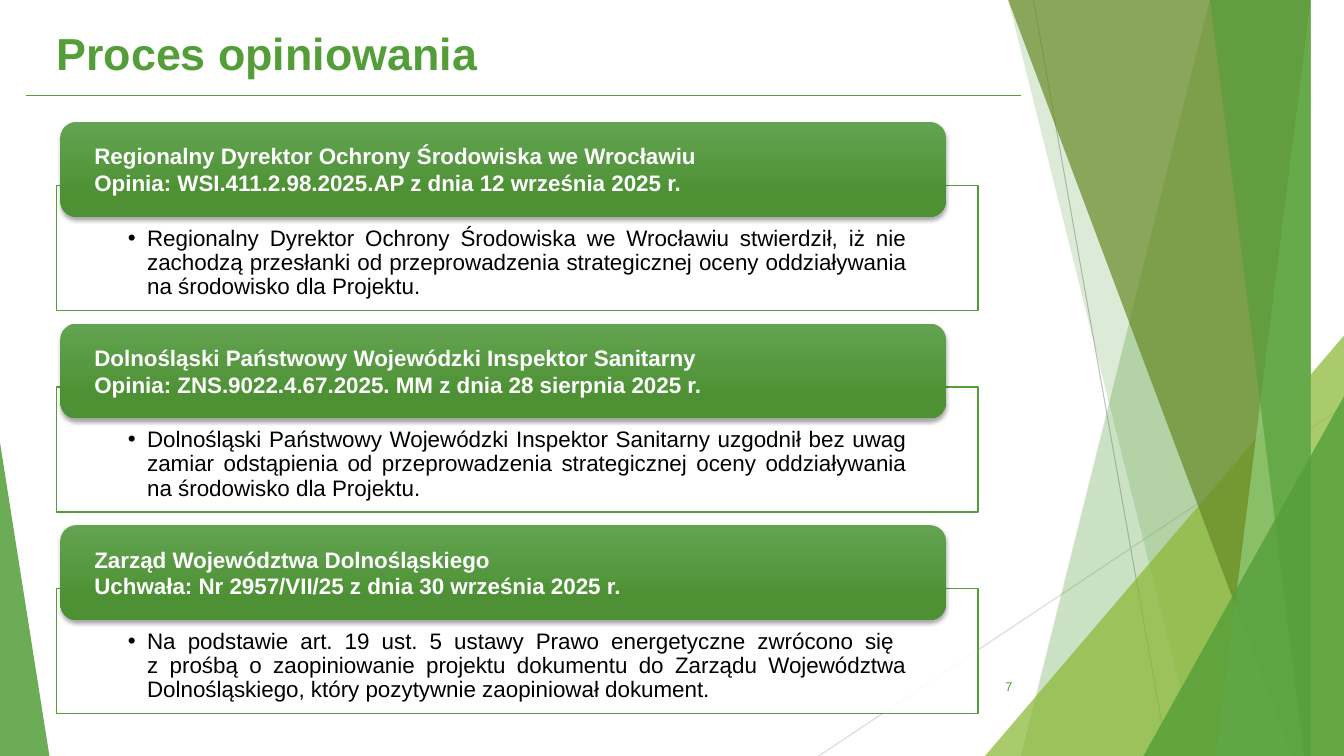
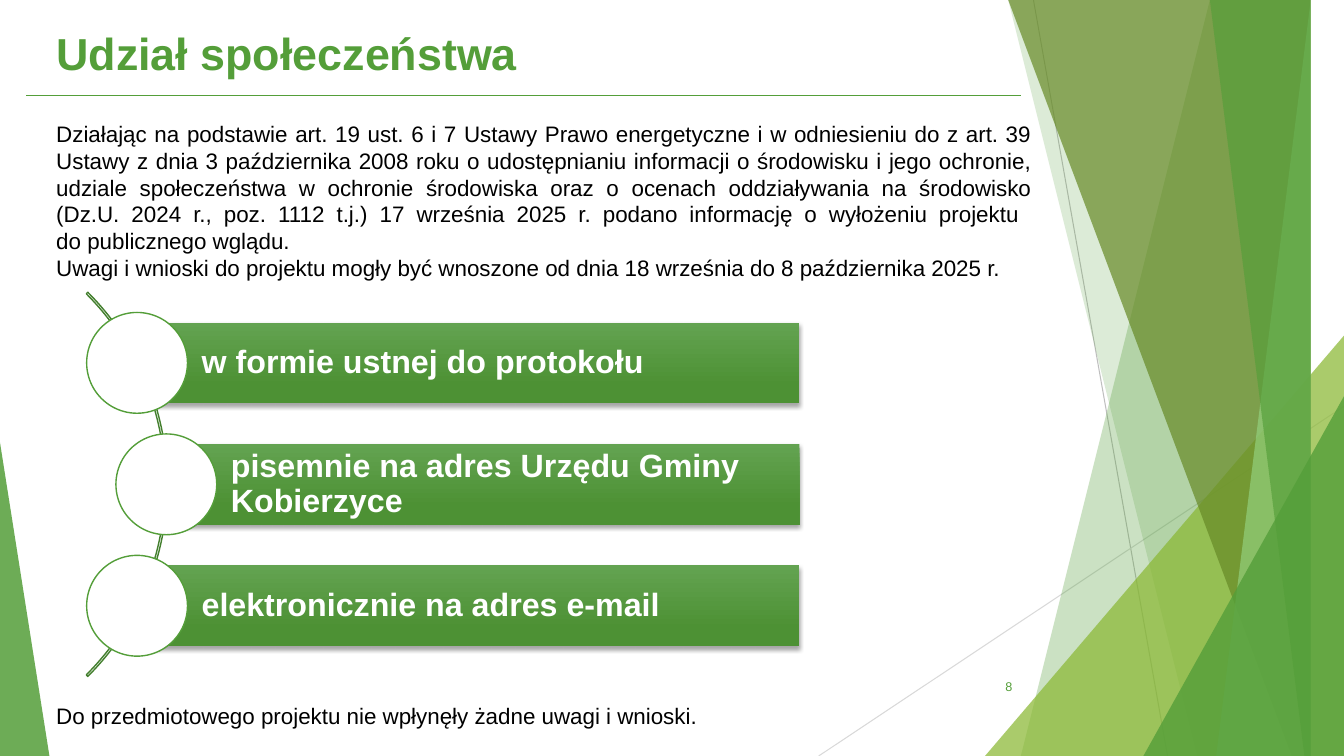
from copy import deepcopy

from lxml.etree import SubElement
from pptx import Presentation
from pptx.dml.color import RGBColor
from pptx.enum.shapes import MSO_CONNECTOR, MSO_SHAPE as SHAPE
from pptx.enum.text import MSO_ANCHOR as ANCHOR, MSO_AUTO_SIZE, PP_ALIGN as ALIGN
from pptx.oxml.ns import qn
from pptx.util import Inches, Pt

WIDTH, HEIGHT = 13.33, 7.5
FONT = "Arial"
GREEN = RGBColor(0x54, 0x9E, 0x39)
DARK_GREEN = RGBColor(0x43, 0x7F, 0x2E)
LIME = RGBColor(0x8A, 0xB8, 0x33)
OLIVE = RGBColor(0x67, 0x8A, 0x26)
LIGHT_GREEN = RGBColor(0x93, 0xD0, 0x7D)
GRADIENT = ((0, RGBColor(0x63, 0xA3, 0x51)), (0.78, RGBColor(0x4D, 0x91, 0x34)))
GRAY = RGBColor(0xBF, 0xBF, 0xBF)
PALE_GRAY = RGBColor(0xD9, 0xD9, 0xD9)
WHITE = RGBColor(0xFF, 0xFF, 0xFF)
BLACK = RGBColor(0, 0, 0)

BODY_TEXT = {"size": Pt(16), "bold": False}
HEADER_TEXT = {"size": Pt(16), "bold": True}
BAR_TEXT = {"size": Pt(23), "bold": True}
TITLE_TEXT = {"size": Pt(32), "bold": True}
NUMBER_TEXT = {"size": Pt(9), "bold": False}
DEFAULT_INSETS = (0.1, 0.05, 0.1, 0.05)

OPINIONS = (
    ("Regionalny Dyrektor Ochrony Środowiska we Wrocławiu\n"
     "Opinia: WSI.411.2.98.2025.AP z dnia 12 września 2025 r.",
     "Regionalny Dyrektor Ochrony Środowiska we Wrocławiu stwierdził, iż nie zachodzą "
     "przesłanki od przeprowadzenia strategicznej oceny oddziaływania na środowisko dla Projektu."),
    ("Dolnośląski Państwowy Wojewódzki Inspektor Sanitarny\n"
     "Opinia: ZNS.9022.4.67.2025. MM z dnia 28 sierpnia 2025 r.",
     "Dolnośląski Państwowy Wojewódzki Inspektor Sanitarny uzgodnił bez uwag zamiar odstąpienia "
     "od przeprowadzenia strategicznej oceny oddziaływania na środowisko dla Projektu."),
    ("Zarząd Województwa Dolnośląskiego\n"
     "Uchwała: Nr 2957/VII/25 z dnia 30 września 2025 r.",
     "Na podstawie art. 19 ust. 5 ustawy Prawo energetyczne zwrócono się \n"
     "z prośbą o zaopiniowanie projektu dokumentu do Zarządu Województwa Dolnośląskiego, "
     "który pozytywnie zaopiniował dokument."),
)
NOTICE = (
    "Działając na podstawie art. 19 ust. 6 i 7 Ustawy Prawo energetyczne i w odniesieniu do "
    "z art. 39 Ustawy z dnia 3 października 2008 roku o udostępnianiu informacji o środowisku "
    "i jego ochronie, udziale społeczeństwa w ochronie środowiska oraz o ocenach oddziaływania "
    "na środowisko (Dz.U. 2024 r., poz. 1112 t.j.) 17 września 2025 r. podano informację "
    "o wyłożeniu projektu \ndo publicznego wglądu.",
    "Uwagi i wnioski do projektu mogły być wnoszone od dnia 18 września do 8 października 2025 r.",
)
CHANNELS = (
    ("w formie ustnej do protokołu", 1.36),
    ("pisemnie na adres Urzędu Gminy Kobierzyce", 1.65),
    ("elektronicznie na adres e-mail", 1.36),
)
OUTCOME = "Do przedmiotowego projektu nie wpłynęły żadne uwagi i wnioski."


def set_all(target, values):
    for name, value in values.items():
        setattr(target, name, value)


def write(box, texts, style, color, align=ALIGN.LEFT, anchor=ANCHOR.TOP,
          insets=DEFAULT_INSETS, spacing=1.0):
    frame = box.text_frame
    left, top, right, bottom = map(Inches, insets)
    set_all(frame, {"word_wrap": True, "auto_size": MSO_AUTO_SIZE.NONE,
                    "vertical_anchor": anchor, "margin_left": left, "margin_top": top,
                    "margin_right": right, "margin_bottom": bottom})
    for index, text in enumerate(texts):
        para = frame.add_paragraph() if index else frame.paragraphs[0]
        para.text = text
        set_all(para, {"alignment": align, "line_spacing": spacing})
        for span in para.runs:
            set_all(span.font, {"name": FONT, **style})
            span.font.color.rgb = color
    for line_break in box.element.iter(qn("a:br")):
        line_break.append(deepcopy(line_break.getprevious().find(qn("a:rPr"))))


def add_text(page, at, texts, style, color, **options):
    box = page.shapes.add_textbox(*map(Inches, at))
    write(box, texts, style, color, **options)
    return box


def paint(shape, fill=None, opacity=100, line=None):
    shape.shadow.inherit = False
    if fill is None:
        shape.fill.background()
    else:
        shape.fill.solid()
        shape.fill.fore_color.rgb = fill
        if opacity < 100:
            color = shape.element.spPr.find(qn("a:solidFill")).find(qn("a:srgbClr"))
            SubElement(color, qn("a:alpha"), val=str(opacity * 1000))
    if line is None:
        shape.line.fill.background()
    else:
        shape.line.color.rgb = line
        shape.line.width = Pt(1)
    return shape


def add_preset(page, kind, at, adjustments=(), **look):
    shape = page.shapes.add_shape(kind, *map(Inches, at))
    for index, value in enumerate(adjustments):
        shape.adjustments[index] = value
    return paint(shape, **look)


def add_panel(page, kind, at):
    panel = add_preset(page, kind, at)
    panel.fill.gradient()
    panel.fill.gradient_angle = 270
    for stop, (position, color) in zip(panel.fill.gradient_stops, GRADIENT):
        stop.position = position
        stop.color.rgb = color
    effects = panel.element.spPr.find(qn("a:effectLst"))
    shadow = SubElement(effects, qn("a:outerShdw"), blurRad=str(Pt(3)), dist=str(Pt(2)),
                        dir="5400000", algn="ctr", rotWithShape="0")
    color = SubElement(shadow, qn("a:srgbClr"), val="000000")
    SubElement(color, qn("a:alpha"), val="35000")
    return panel


def add_line(page, start, end, color, width):
    line = page.shapes.add_connector(MSO_CONNECTOR.STRAIGHT, *map(Inches, start + end))
    line.line.color.rgb = color
    line.line.width = Pt(width)
    SubElement(line.element.spPr, qn("a:effectLst"))
    return line


def add_shard(page, top, bottom, color, opacity):
    builder = page.shapes.build_freeform(top, 0, scale=Inches(1))
    builder.add_line_segments([(WIDTH, 0), (WIDTH, HEIGHT), (bottom, HEIGHT)], close=True)
    return paint(builder.convert_to_shape(), color, opacity)


def add_corner(page, at, apex, color, opacity):
    return add_preset(page, SHAPE.ISOSCELES_TRIANGLE, at, (apex,), fill=color, opacity=opacity)


def decorate_layout(layout, page):
    decor = [
        add_line(page, (10.25, 0), (11.58, HEIGHT), GRAY, 0.75),
        add_line(page, (WIDTH, 4.03), (8.12, HEIGHT), PALE_GRAY, 0.75),
        add_shard(page, 12.28, 10.04, GREEN, 30),
        add_shard(page, 10.5, 11.83, GREEN, 20),
        add_corner(page, (9.77, 3.33, 3.56, 4.17), 1, LIME, 72),
        add_shard(page, 10.21, 12.91, OLIVE, 70),
        add_shard(page, 13.03, 11.92, LIGHT_GREEN, 70),
        add_shard(page, 11.96, 13.18, GREEN, 65),
        add_corner(page, (11.34, 3.93, 1.99, 3.57), 1, GREEN, 80),
        add_corner(page, (0, 4.39, 0.49, 3.11), 0, GREEN, 85),
        add_line(page, (0.26, 0.95), (10.13, 0.95), GREEN, 1),
    ]
    for index, shape in enumerate(decor):
        shape.element.xpath(".//p:cNvPr")[0].set("id", str(100 + index))
        layout.shapes.element.insert(2 + index, shape.element)


def add_page(deck, layout, title, number):
    page = deck.slides.add_slide(layout)
    heading = page.shapes.title
    set_all(heading, {"left": Inches(0.46), "top": Inches(0.21),
                      "width": Inches(6.67), "height": Inches(0.64)})
    write(heading, [title], TITLE_TEXT, GREEN)
    add_text(page, (9.39, 6.61, 0.75, 0.4), [str(number)], NUMBER_TEXT, GREEN,
             align=ALIGN.RIGHT, anchor=ANCHOR.MIDDLE)
    return page


def add_opinion(page, top, header, body):
    box = add_preset(page, SHAPE.RECTANGLE, (0.56, top + 0.63, 9.14, 1.24),
                     fill=WHITE, opacity=90, line=GREEN)
    write(box, [body], BODY_TEXT, BLACK, align=ALIGN.JUSTIFY,
          insets=(0.71, 0.41, 0.71, 0.12), spacing=0.9)
    for properties in box.element.iter(qn("a:pPr")):
        properties.set("marL", str(Inches(0.19)))
        properties.set("indent", str(Inches(-0.19)))
        SubElement(properties, qn("a:buFont"), typeface=FONT)
        SubElement(properties, qn("a:buChar"), char="•")
    panel = add_panel(page, SHAPE.ROUNDED_RECTANGLE, (0.6, top, 8.78, 0.94))
    write(panel, [header], HEADER_TEXT, WHITE, anchor=ANCHOR.MIDDLE, insets=(0.29, 0, 0.29, 0))


def add_channel(page, left, top, text):
    bar = add_panel(page, SHAPE.RECTANGLE, (left, top, 7.93 - left, 0.8))
    write(bar, [text], BAR_TEXT, WHITE, anchor=ANCHOR.MIDDLE,
          insets=(0.64, 0.06, 0.06, 0.06), spacing=0.9)
    add_preset(page, SHAPE.OVAL, (left - 0.5, top - 0.1, 1, 1), fill=WHITE, line=GREEN)


def fill_opinions(page):
    for index, (header, body) in enumerate(OPINIONS):
        add_opinion(page, 1.21 + 2 * index, header, body)


def fill_participation(page):
    add_text(page, (0.46, 1.14, 9.87, 1.72), NOTICE, BODY_TEXT, BLACK, align=ALIGN.JUSTIFY)
    add_preset(page, SHAPE.BLOCK_ARC, (-3.73, 2.11, 5.39, 5.39), (189, 27, 0.004),
               line=DARK_GREEN)
    for index, (text, left) in enumerate(CHANNELS):
        add_channel(page, left, 3.2 + 1.205 * index, text)
    add_text(page, (0.46, 6.92, 7.53, 0.37), [OUTCOME], BODY_TEXT, BLACK)


def main():
    deck = Presentation()
    deck.slide_width, deck.slide_height = Inches(WIDTH), Inches(HEIGHT)
    layout = deck.slide_layouts[5]
    opinions = add_page(deck, layout, "Proces opiniowania", 7)
    decorate_layout(layout, opinions)
    fill_opinions(opinions)
    fill_participation(add_page(deck, layout, "Udział społeczeństwa", 8))
    deck.save("out.pptx")


if __name__ == "__main__":
    main()
